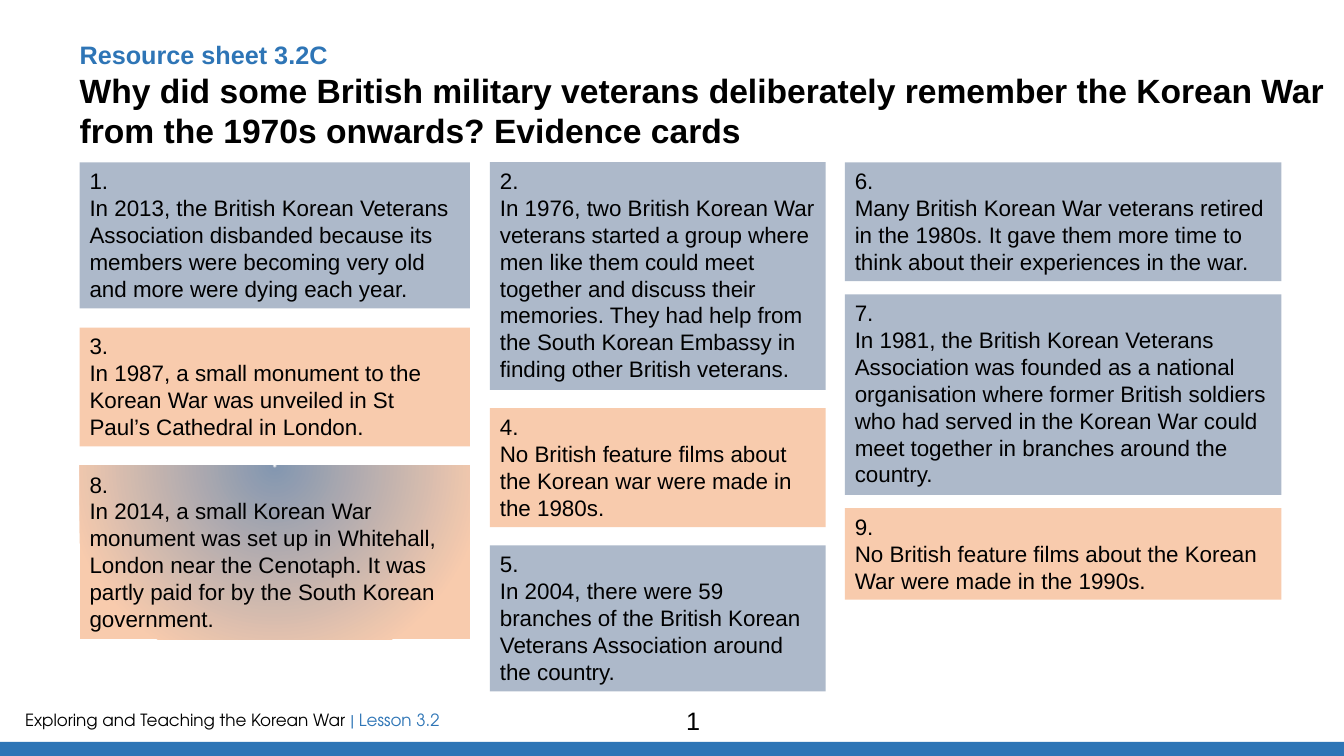
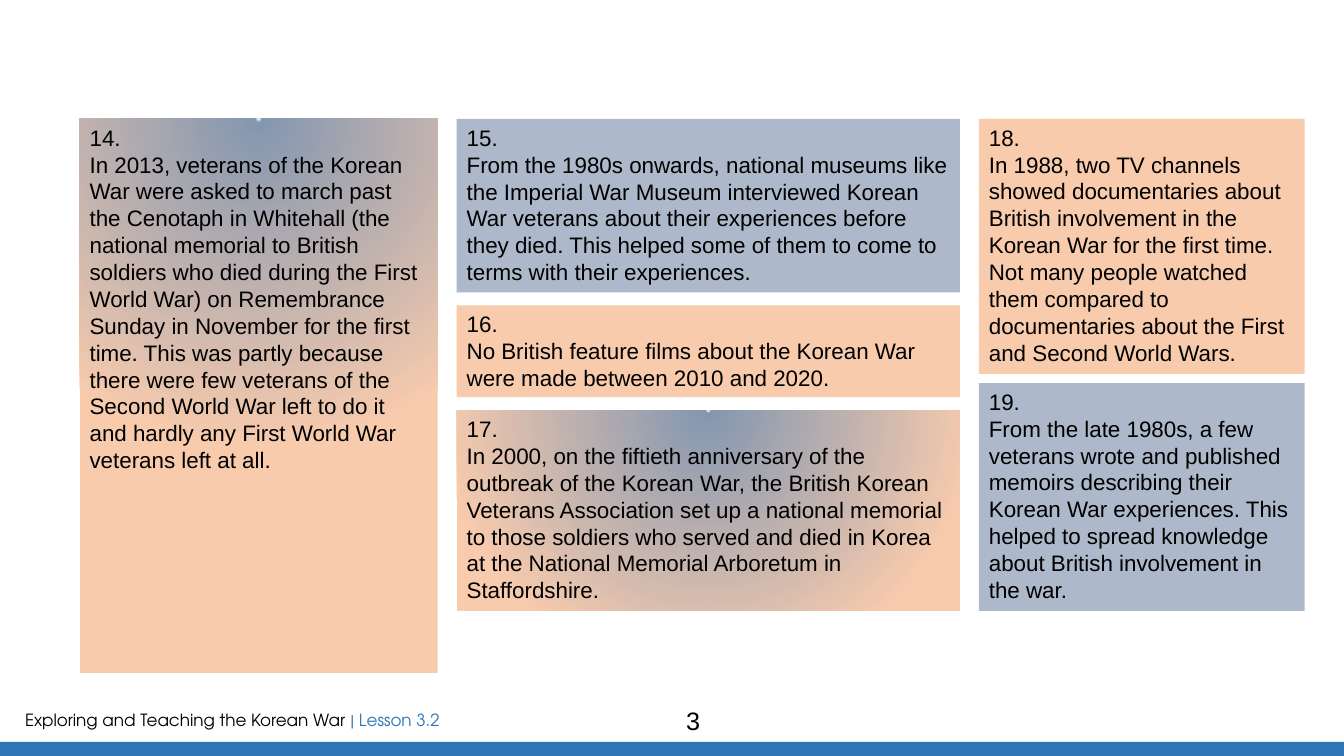
from pptx import Presentation
from pptx import oxml
from pptx.dml import color
from pptx.enum import shapes, text
from pptx.oxml import ns
from pptx.util import Inches, Pt

# Shared look
BLUE, BLACK = "2E75B6", "000000"
GREY, PEACH, GLOW = "ADB9CA", "F8CBAD", "glow"
STOPS = [(0, "FFFFFF"), (1, "8497B0"), (100, PEACH)]
HEAD = {"size": Pt(18), "name": "Arial", "bold": True}
CARD = {"size": Pt(16), "name": "Arial"}
FOOT = {"size": Pt(12), "name": "TeX Gyre Adventor"}
PAGE = {"size": Pt(18), "name": "Arial"}
LINE, PAD = 0.27, 0.1  # height of a card's text line and its padding

# Columns: left, width, gap, cards (number, fill, lines tall, words)
FIRST = [
    (0.79, 3.87, 0.19, [
        (1, GREY, 5, "In 2013, the British Korean Veterans Association disbanded "
         "because its members were becoming very old and more were dying each year."),
        (3, PEACH, 4, "In 1987, a small monument to the Korean War was unveiled "
         "in St Paul’s Cathedral in London."),
        (8, GLOW, 6, "In 2014, a small Korean War monument was set up in Whitehall, "
         "London near the Cenotaph. It was partly paid for by the South Korean "
         "government."),
    ]),
    (4.86, 3.33, 0.18, [
        (2, GREY, 8, "In 1976, two British Korean War veterans started a group where "
         "men like them could meet together and discuss their memories. They had "
         "help from the South Korean Embassy in finding other British veterans."),
        (4, PEACH, 4, "No British feature films about the Korean war were made in "
         "the 1980s."),
        (5, GREY, 5, "In 2004, there were 59 branches of the British Korean Veterans "
         "Association around the country."),
    ]),
    (8.38, 4.33, 0.13, [
        (6, GREY, 4, "Many British Korean War veterans retired in the 1980s. It gave "
         "them more time to think about their experiences in the war."),
        (7, GREY, 7, "In 1981, the British Korean Veterans Association was founded as "
         "a national organisation where former British soldiers who had served in "
         "the Korean War could meet together in branches around the country."),
        (9, PEACH, 3, "No British feature films about the Korean War were made in "
         "the 1990s."),
    ]),
]
SECOND = [
    (0.79, 3.55, 0, [
        (14, GLOW, 20, "In 2013, veterans of the Korean War were asked to march past "
         "the Cenotaph in Whitehall (the national memorial to British soldiers who "
         "died during the First World War) on Remembrance Sunday in November for "
         "the first time. This was partly because there were few veterans of the "
         "Second World War left to do it and hardly any First World War veterans "
         "left at all."),
    ]),
    (4.53, 4.99, 0.13, [
        (15, GREY, 6, "From the 1980s onwards, national museums like the Imperial War "
         "Museum interviewed Korean War veterans about their experiences before "
         "they died. This helped some of them to come to terms with their "
         "experiences."),
        (16, PEACH, 3, "No British feature films about the Korean War were made "
         "between 2010 and 2020."),
        (17, GLOW, 7, "In 2000, on the fiftieth anniversary of the outbreak of the "
         "Korean War, the British Korean Veterans Association set up a national "
         "memorial to those soldiers who served and died in Korea at the National "
         "Memorial Arboretum in Staffordshire."),
    ]),
    (9.71, 3.23, 0.09, [
        (18, PEACH, 9, "In 1988, two TV channels showed documentaries about British "
         "involvement in the Korean War for the first time. Not many people watched "
         "them compared to documentaries about the First and Second World Wars."),
        (19, GREY, 8, "From the late 1980s, a few veterans wrote and published memoirs "
         "describing their Korean War experiences. This helped to spread knowledge "
         "about British involvement in the war."),
    ]),
]


def rgb(code):
    return color.RGBColor.from_string(code)


def write(para, words, form, tint=BLACK):
    """Add one formatted run to a paragraph."""
    run = para.add_run()
    run.text = words
    for key, value in form.items():
        setattr(run.font, key, value)
    run.font.color.rgb = rgb(tint)


def glow(shape):
    """Swap the solid fill for a circular gradient centred above the card."""
    stops = "".join(f'<a:gs pos="{pos * 1000}"><a:srgbClr val="{tint}"/></a:gs>'
                    for pos, tint in STOPS)
    grad = oxml.parse_xml(
        f'<a:gradFill {ns.nsdecls("a")} rotWithShape="1"><a:gsLst>{stops}</a:gsLst>'
        '<a:path path="circle"><a:fillToRect l="50000" t="-80000" r="50000" '
        'b="180000"/></a:path></a:gradFill>')
    solid = shape.element.spPr.find(ns.qn("a:solidFill"))
    solid.getparent().replace(solid, grad)


def block(slide, box, fill):
    """Add a plain rectangle without outline or shadow."""
    shape = slide.shapes.add_shape(shapes.MSO_SHAPE.RECTANGLE, *map(Inches, box))
    shape.shadow.inherit = False
    shape.line.fill.background()
    shape.fill.solid()
    shape.fill.fore_color.rgb = rgb(PEACH if fill == GLOW else fill)
    if fill == GLOW:
        glow(shape)
    return shape


def label(slide, box, parts, form, align=text.PP_ALIGN.LEFT):
    """Add a one-line text box made of (words, colour) parts."""
    shape = slide.shapes.add_textbox(*map(Inches, box))
    shape.text_frame.word_wrap = True
    para = shape.text_frame.paragraphs[0]
    para.alignment = align
    for words, tint in parts:
        write(para, words, form, tint)
    return shape


def card(slide, box, num, fill, words):
    frame = block(slide, box, fill).text_frame
    frame.word_wrap = True
    frame.vertical_anchor = text.MSO_ANCHOR.TOP
    for para, line in zip((frame.paragraphs[0], frame.add_paragraph()),
                          (f"{num}.", words)):
        para.alignment = text.PP_ALIGN.LEFT
        write(para, line, CARD)


def stack(slide, top, cols):
    """Stack the cards of each column downwards from a common top."""
    for left, width, gap, cards in cols:
        y = top
        for num, fill, lines, words in cards:
            high = PAD + LINE * lines
            card(slide, (left, y, width, high), num, fill, words)
            y += high + gap


def title(slide, kicker, words):
    shape = slide.shapes.title
    shape.left, shape.top, shape.width, shape.height = map(
        Inches, (0.79, 0.39, 12.37, 1.2))
    frame = shape.text_frame
    form = {"margin_left": 0, "margin_top": 0, "margin_right": 0,
            "margin_bottom": 0, "word_wrap": True,
            "auto_size": text.MSO_AUTO_SIZE.NONE,
            "vertical_anchor": text.MSO_ANCHOR.TOP}
    for key, value in form.items():
        setattr(frame, key, value)
    write(frame.paragraphs[0], kicker, HEAD, BLUE)
    write(frame.add_paragraph(), words, {**HEAD, "size": Pt(24)})
    for para in frame.paragraphs:
        para.alignment = text.PP_ALIGN.LEFT


def footer(deck, slide):
    """Build the footer on a slide, then move it to the master."""
    parts = [("Exploring and Teaching the Korean War ", BLACK),
             ("| Lesson 3.2", BLUE)]
    for shape in (label(slide, (0.15, 6.99, 7.82, 0.3), parts, FOOT),
                  block(slide, (0, 7.36, 13.33, 0.15), BLUE)):
        deck.slide_master.shapes.element.append(shape.element)


def page(slide, num):
    label(slide, (4.34, 6.95, 5.07, 0.4), [(num, BLACK)], PAGE,
          text.PP_ALIGN.CENTER)


def main():
    deck = Presentation()
    deck.slide_width, deck.slide_height = Inches(13.33), Inches(7.5)
    named, blank = deck.slide_layouts[5], deck.slide_layouts[6]

    # Slide with heading and cards 1 to 9
    slide = deck.slides.add_slide(named)
    footer(deck, slide)
    title(slide, "Resource sheet 3.2C",
          "Why did some British military veterans deliberately remember the "
          "Korean War from the 1970s onwards? Evidence cards")
    page(slide, "1")
    stack(slide, 1.61, FIRST)

    # Slide with cards 14 to 19
    slide = deck.slides.add_slide(blank)
    page(slide, "3")
    stack(slide, 1.18, SECOND)

    deck.save("out.pptx")


if __name__ == "__main__":
    main()
